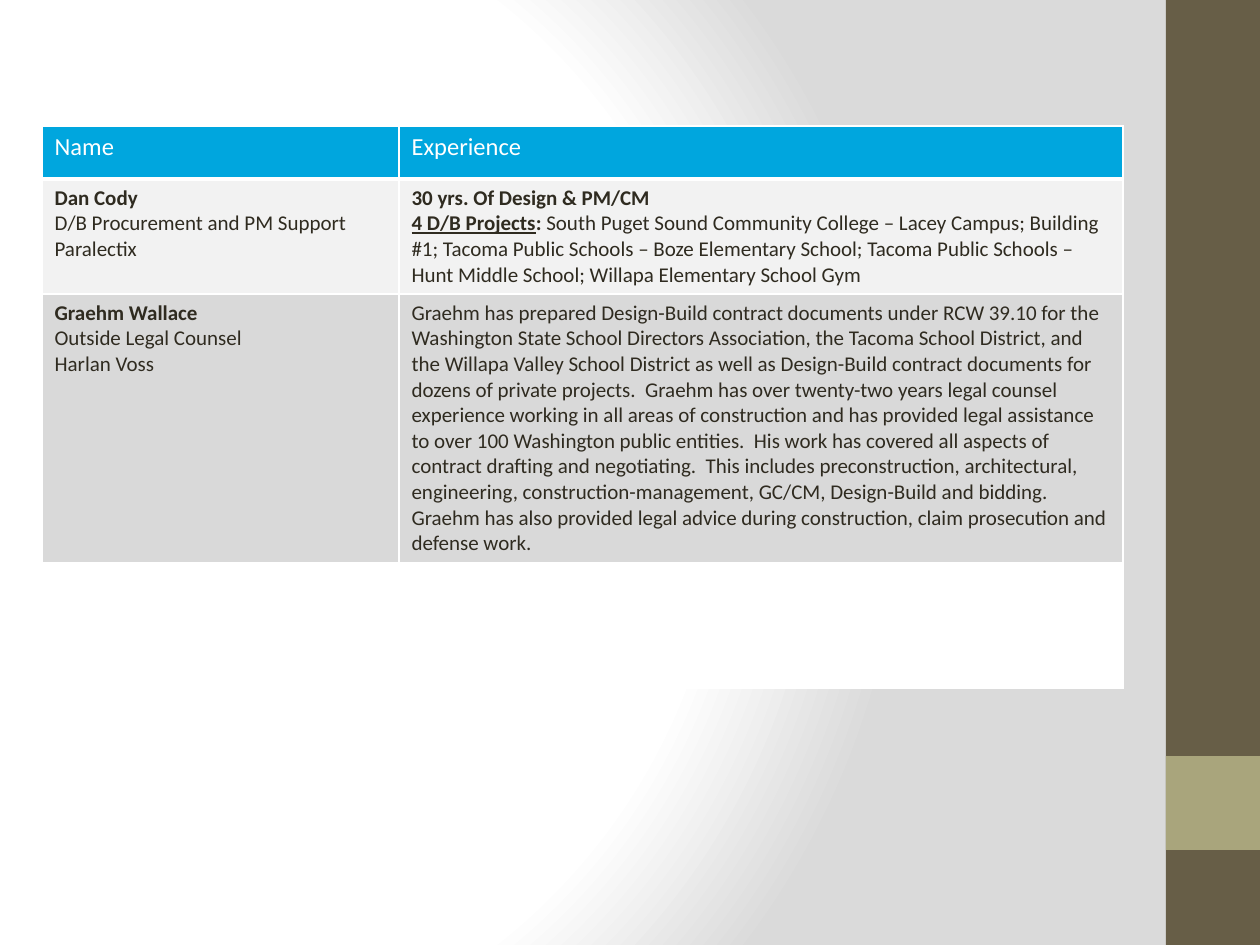
"""Build a slide with a table of team members and their experience."""
import pptx
import pptx.dml.color
import pptx.enum.shapes
import pptx.oxml
import pptx.oxml.ns
import pptx.util

EMU_PER_PX = 914400 // 126
WHITE = pptx.dml.color.RGBColor(0xFF, 0xFF, 0xFF)
SILVER = pptx.dml.color.RGBColor(0xDA, 0xDA, 0xDA)
BROWN = pptx.dml.color.RGBColor(0x67, 0x5E, 0x47)
OLIVE = pptx.dml.color.RGBColor(0xA9, 0xA5, 0x7C)
BLUE = pptx.dml.color.RGBColor(0x00, 0xA6, 0xDE)
LIGHT_GRAY = pptx.dml.color.RGBColor(0xF2, 0xF2, 0xF2)
GRAY = pptx.dml.color.RGBColor(0xD9, 0xD9, 0xD9)
INK = pptx.dml.color.RGBColor(0x2F, 0x2B, 0x20)

COLUMN_WIDTHS = (357, 724)
ROW_HEIGHTS = (53, 98, 168, 126)
ROW_STYLES = ((BLUE, WHITE, 14), (LIGHT_GRAY, INK, 12), (GRAY, INK, 12), (WHITE, INK, 18))

ROWS = (
    ([[("Name", "")]], [[("Experience", "")]]),
    (
        [[("Dan Cody", "b")], [("D/B Procurement and PM Support", "")], [("Paralectix", "")]],
        [
            [("30 yrs. Of Design & PM/CM", "b")],
            [
                ("4 D/B Projects", "bu"),
                (": ", "b"),
                ("South Puget Sound Community College – Lacey Campus; Building #1; "
                 "Tacoma Public Schools – Boze Elementary School; Tacoma Public Schools – "
                 "Hunt Middle School; Willapa Elementary School Gym", ""),
            ],
        ],
    ),
    (
        [[("Graehm Wallace", "b")], [("Outside Legal Counsel", "")], [("Harlan Voss", "")]],
        [[(
            "Graehm has prepared Design-Build contract documents under RCW 39.10 for the "
            "Washington State School Directors Association, the Tacoma School District, and "
            "the Willapa Valley School District as well as Design-Build contract documents for "
            "dozens of private projects.  Graehm has over twenty-two years legal counsel "
            "experience working in all areas of construction and has provided legal assistance "
            "to over 100 Washington public entities.  His work has covered all aspects of "
            "contract drafting and negotiating.  This includes preconstruction, architectural, "
            "engineering, construction-management, GC/CM, Design-Build and bidding.  "
            "Graehm has also provided legal advice during construction, claim prosecution and "
            "defense work.", "")]],
    ),
    ([], []),
)


def px(length):
    """Turn pixels into EMU."""
    return pptx.util.Emu(length * EMU_PER_PX)


class SlideBuilder:
    """Hold the style and the current slide."""

    def __init__(self, slide, font_name):
        """Keep the slide and its font."""
        self.slide = slide
        self.font_name = font_name

    def background(self, stops):
        """Fill the background with a circular gradient."""
        fill = self.slide.background.fill
        fill.gradient()
        stop_xml = "".join(
            f'<a:gs pos="{percent * 1000}"><a:srgbClr val="{color}"/></a:gs>'
            for percent, color in stops
        )
        gradient = pptx.oxml.parse_xml(
            f'<a:gradFill {pptx.oxml.ns.nsdecls("a")} rotWithShape="1">'
            f'<a:gsLst>{stop_xml}</a:gsLst><a:path path="circle">'
            '<a:fillToRect l="20000" t="50000" r="100000" b="50000"/>'
            '</a:path></a:gradFill>'
        )
        old_gradient = self.slide.element.find(".//" + pptx.oxml.ns.qn("a:gradFill"))
        old_gradient.getparent().replace(old_gradient, gradient)

    def rectangle(self, left, top, width, height, color):
        """Add a plain filled rectangle."""
        shape = self.slide.shapes.add_shape(
            pptx.enum.shapes.MSO_SHAPE.RECTANGLE, px(left), px(top), px(width), px(height)
        )
        shape.shadow.inherit = False
        shape.fill.solid()
        shape.fill.fore_color.rgb = color
        shape.line.fill.background()

    def table(self, left, top, rows):
        """Add the table with its texts, fills and borders."""
        table = self.slide.shapes.add_table(
            len(ROW_HEIGHTS), len(COLUMN_WIDTHS), px(left), px(top),
            px(sum(COLUMN_WIDTHS)), px(sum(ROW_HEIGHTS)),
        ).table
        for column, width in zip(table.columns, COLUMN_WIDTHS):
            column.width = px(width)
        for row, height in zip(table.rows, ROW_HEIGHTS):
            row.height = px(height)
        for row_index, (row, (fill, color, size)) in enumerate(zip(rows, ROW_STYLES)):
            for column_index, paragraphs in enumerate(row):
                cell = table.cell(row_index, column_index)
                cell.fill.solid()
                cell.fill.fore_color.rgb = fill
                self.borders(cell, 3 if row_index == 1 else 1, 3 if row_index == 0 else 1)
                self.cell_text(cell, paragraphs, color, size)

    def borders(self, cell, top, bottom):
        """Draw white borders around a cell."""
        properties = cell._tc.get_or_add_tcPr()
        for index, (side, width) in enumerate((("L", 1), ("R", 1), ("T", top), ("B", bottom))):
            properties.insert(index, pptx.oxml.parse_xml(
                f'<a:ln{side} {pptx.oxml.ns.nsdecls("a")} w="{pptx.util.Pt(width)}">'
                f'<a:solidFill><a:srgbClr val="{WHITE}"/></a:solidFill></a:ln{side}>'
            ))

    def cell_text(self, cell, paragraphs, color, size):
        """Write styled runs into a cell."""
        text_frame = cell.text_frame
        for index, runs in enumerate(paragraphs):
            paragraph = text_frame.add_paragraph() if index else text_frame.paragraphs[0]
            for text, style in runs:
                run = paragraph.add_run()
                run.text = text
                run.font.name = self.font_name
                run.font.size = pptx.util.Pt(size)
                run.font.color.rgb = color
                run.font.bold = "b" in style
                run.font.underline = "u" in style


def main():
    """Build and save the presentation."""
    presentation = pptx.Presentation()
    presentation.slide_width = px(1260)
    presentation.slide_height = px(945)
    slide = presentation.slides.add_slide(presentation.slide_layouts[6])
    builder = SlideBuilder(slide, "Calibri")
    builder.background(((0, WHITE), (75, WHITE), (100, SILVER)))
    builder.rectangle(1166, 0, 94, 945, BROWN)
    builder.rectangle(1166, 756, 94, 94, OLIVE)
    builder.table(42, 126, ROWS)
    presentation.save("out.pptx")


if __name__ == "__main__":
    main()
